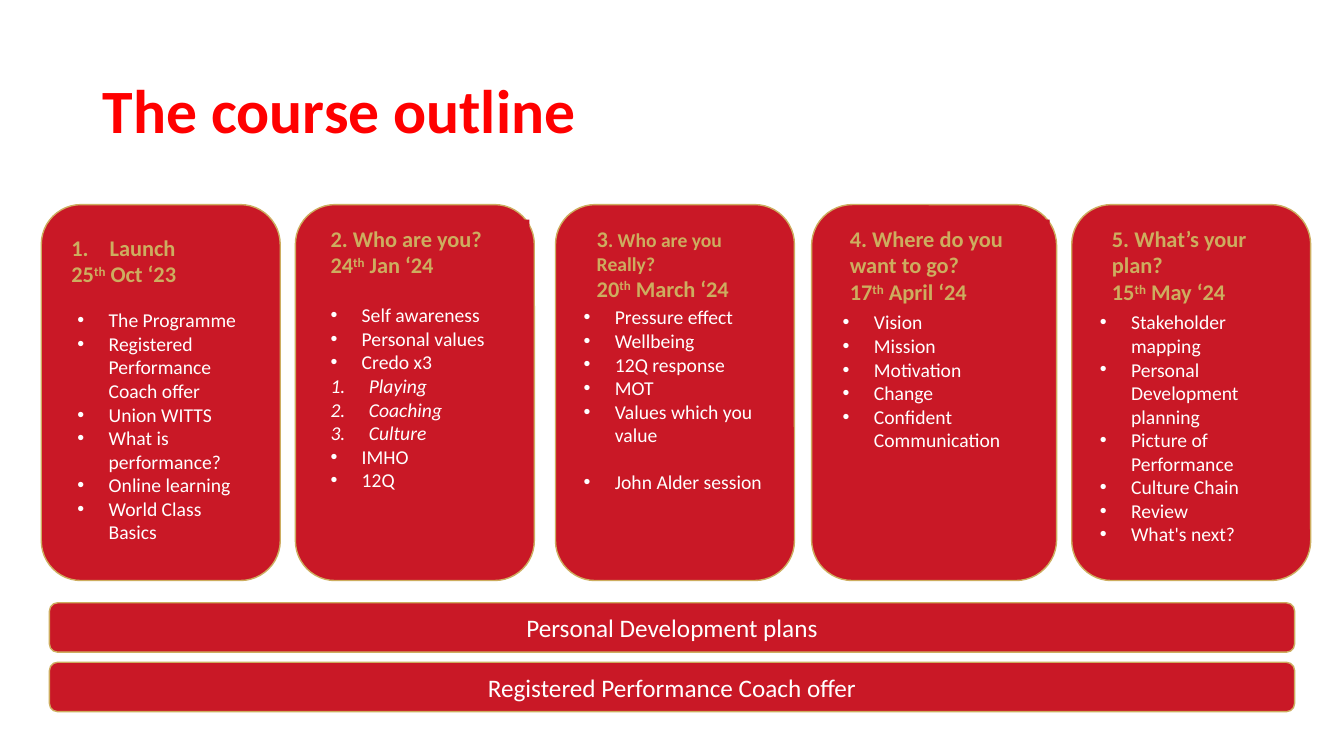
"""Build the course outline slide: five session cards above two full-width bars."""
from dataclasses import dataclass
from lxml import etree
from pptx import Presentation
from pptx import util as u
from pptx.dml.color import RGBColor
from pptx.enum import shapes, text
from pptx.oxml.ns import qn


@dataclass(frozen=True)
class Theme:
    font: str = "Calibri"
    red: str = "C91826"
    gold: str = "CDAD5F"
    white: str = "FFFFFF"
    bright: str = "FF0000"
    title: int = 44
    bar: int = 18
    head: int = 16
    body: int = 14


theme = Theme()


def put(shape, lines, size, color, bold=False, align="LEFT", anchor="TOP", spacing=None):
    """Write lines; a lead of •, + or # marks a list item, | parts runs tagged ^, ~ or /."""
    frame = shape.text_frame
    frame.word_wrap = True
    frame.vertical_anchor = text.MSO_ANCHOR[anchor]
    for i, line in enumerate(lines):
        para = frame.paragraphs[0] if i == 0 else frame.add_paragraph()
        para.alignment = text.PP_ALIGN[align]
        if line[:2] in ("• ", "+ ", "# "):
            mark, line = line[0], line[2:]
            props = para._p.get_or_add_pPr()
            indent = u.Inches(0.38 if mark == "#" else 0.31)
            props.set("marL", str(indent))
            props.set("indent", str(-indent))
            if mark == "#":
                etree.SubElement(props, qn("a:buFont"), typeface="+mj-lt")
                etree.SubElement(props, qn("a:buAutoNum"), type="arabicPeriod")
            else:
                etree.SubElement(props, qn("a:buFont"), typeface="Arial")
                etree.SubElement(props, qn("a:buChar"), char="•")
            if mark == "+":
                para.space_before = u.Pt(17)
        if spacing:
            para.line_spacing = spacing
        for part in line.split("|"):
            tag = part[0] if part[0] in "^~/" else ""
            run = para.add_run()
            run.text = part[len(tag):]
            font = run.font
            font.name, font.bold = theme.font, bold
            font.size = u.Pt(theme.body if tag == "~" else size)
            font.color.rgb = RGBColor.from_string(color)
            if tag == "/":
                font.italic = True
            if tag == "^":
                run._r.get_or_add_rPr().set("baseline", "30000")


def add(slide, kind, place, edge=False):
    """Add a red shape, with a gold edge if asked."""
    shape = slide.shapes.add_shape(shapes.MSO_SHAPE[kind], *map(u.Inches, place))
    shape.shadow.inherit = False
    shape.fill.solid()
    shape.fill.fore_color.rgb = RGBColor.from_string(theme.red)
    if edge:
        shape.line.color.rgb = RGBColor.from_string(theme.gold)
        shape.line.width = u.Pt(1)
    else:
        shape.line.fill.background()
    return shape


cards = [
    ((0.41, 2.37), (0.61, 2.27, 2.13, 0.64), ["# Launch", "25|^th| Oct ‘23"],
     (0.67, 3.01, 1.94, 2.46),
     ["• The Programme", "• Registered Performance Coach offer", "• Union WITTS",
      "• What is performance?", "• Online learning", "• World Class Basics"]),
    ((2.93, 2.37), (3.18, 2.18, 2.07, 0.64), ["2. Who are you?", "24|^th| Jan ‘24"],
     (3.18, 2.96, 1.94, 1.99),
     ["• Self awareness", "• Personal values", "• Credo x3", "# /Playing",
      "# /Coaching", "# /Culture", "• IMHO", "• 12Q"]),
    ((5.51, 2.37), (5.82, 2.18, 1.81, 0.91),
     ["3|~. Who are you Really?", "20|^th| March ‘24"],
     (5.69, 2.98, 2.09, 1.99),
     ["• Pressure effect", "• Wellbeing", "• 12Q response", "• MOT",
      "• Values which you value", "+ John Alder session"]),
    ((8.05, 2.43), (8.33, 2.18, 2.08, 0.91),
     ["4. Where do you want to go?", "17|^th| April ‘24"],
     (8.26, 3.03, 1.94, 1.51),
     ["• Vision", "• Mission", "• Motivation", "• Change", "• Confident Communication"]),
    ((10.63, 2.37), (10.93, 2.18, 1.81, 0.91),
     ["5. What’s your plan?", "15|^th| May ‘24"],
     (10.81, 3.03, 2.03, 2.46),
     ["• Stakeholder mapping", "• Personal Development planning",
      "• Picture of Performance", "• Culture Chain", "• Review", "• What's next?"]),
]
bars = ["Personal Development plans", "Registered Performance Coach offer"]

deck = Presentation()
deck.slide_width, deck.slide_height = u.Inches(13.33), u.Inches(7.5)
slide = deck.slides.add_slide(deck.slide_layouts[5])

title = slide.shapes.title
title.left, title.top = u.Inches(0.92), u.Inches(0.4)
title.width, title.height = u.Inches(11.5), u.Inches(1.45)
put(title, ["The course outline"], theme.title, theme.bright, bold=True,
    anchor="MIDDLE", spacing=0.9)

for (left, width), top_place, heads, low_place, items in cards:
    add(slide, "ROUNDED_RECTANGLE", (left, 2.03, width, 3.73), edge=True)
    put(add(slide, "RECTANGLE", top_place), heads, theme.head, theme.gold, bold=True)
    put(add(slide, "RECTANGLE", low_place), items, theme.body, theme.white)

for i, label in enumerate(bars):
    bar = add(slide, "ROUNDED_RECTANGLE", (0.49, 5.98 + 0.59 * i, 12.35, 0.49), edge=True)
    put(bar, [label], theme.bar, theme.white, align="CENTER", anchor="MIDDLE")

deck.save("out.pptx")
